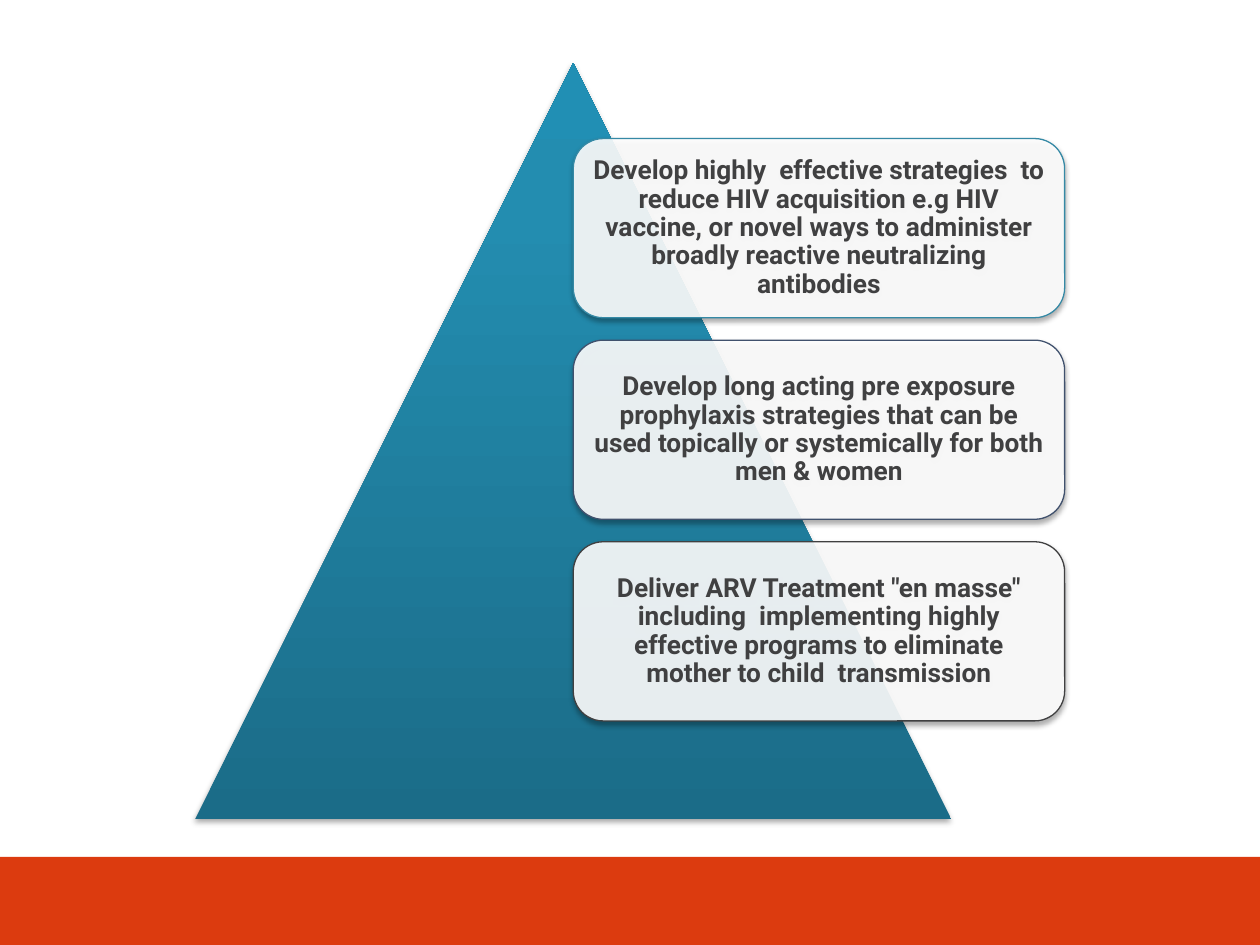
from lxml.etree import SubElement
from pptx import Presentation
from pptx.dml.color import RGBColor
from pptx.enum.shapes import MSO_SHAPE as SHAPE
from pptx.enum.text import MSO_ANCHOR as ANCHOR, PP_ALIGN as ALIGN
from pptx.oxml.ns import qn
from pptx.util import Pt

FONT = "Roboto"
GOALS = [
    ("Develop highly  effective strategies  to reduce HIV acquisition e.g HIV vaccine, "
     "or novel ways to administer broadly reactive neutralizing antibodies", "3589A5"),
    ("Develop long acting pre exposure prophylaxis strategies that can be used topically "
     "or systemically for both men & women", "40516D"),
    ("Deliver ARV Treatment \"en masse\" including  implementing highly effective programs "
     "to eliminate mother to child  transmission", "404041"),
]
STOPS = [(0, "1B6C88"), (80, "238DB0"), (100, "218FB4")]


def rgb(color):
    """Turn a hex string into a colour."""
    return RGBColor.from_string(color)


def add_child(parent, tag, **attrs):
    """Append a DrawingML element with the given attributes."""
    return SubElement(parent, qn(f"a:{tag}"), {k: str(v) for k, v in attrs.items()})


def add_color(parent, color, alpha=100):
    """Append a hex colour with an opacity in percent."""
    clr = add_child(parent, "srgbClr", val=color)
    if alpha < 100:
        add_child(clr, "alpha", val=alpha * 1000)


def add_box(slide, kind, x, y, w, h, fill=None, line=None, alpha=100):
    """Add a preset shape with a flat fill and an optional outline."""
    sp = slide.shapes.add_shape(kind, Pt(x), Pt(y), Pt(w), Pt(h))
    sp.shadow.inherit = False
    if fill:
        sp.fill.solid()
        sp.fill.fore_color.rgb = rgb(fill)
        if alpha < 100:
            clr = sp._element.spPr.find(f"{qn('a:solidFill')}/{qn('a:srgbClr')}")
            add_child(clr, "alpha", val=alpha * 1000)
    if line:
        sp.line.color.rgb = rgb(line)
        sp.line.width = Pt(0.75)
    else:
        sp.line.fill.background()
    return sp


def set_shadow(sp):
    """Give a shape a soft shadow below it."""
    effects = sp._element.spPr.find(qn("a:effectLst"))
    shadow = add_child(effects, "outerShdw", blurRad=Pt(3.1), dist=Pt(1.8),
                       dir=90 * 60000, rotWithShape=0)
    add_color(shadow, "000000", 35)


def set_gradient(sp, stops, angle):
    """Fill a shape with a linear gradient."""
    sp.fill.gradient()
    grad = sp._element.spPr.find(qn("a:gradFill"))
    for child in list(grad):
        grad.remove(child)
    stop_list = add_child(grad, "gsLst")
    for pos, color in stops:
        add_color(add_child(stop_list, "gs", pos=pos * 1000), color)
    add_child(grad, "lin", ang=angle * 60000, scaled=0)


def set_text(sp, text, size=15, color="404041", bold=True, inset=4.5):
    """Write centred text into a shape."""
    tf = sp.text_frame
    tf.word_wrap = True
    tf.vertical_anchor = ANCHOR.MIDDLE
    tf.margin_left = tf.margin_right = tf.margin_top = tf.margin_bottom = Pt(inset)
    p = tf.paragraphs[0]
    p.alignment = ALIGN.CENTER
    p.line_spacing = 0.9
    r = p.add_run()
    r.text = text
    r.font.name = FONT
    r.font.size = Pt(size)
    r.font.bold = bold
    r.font.color.rgb = rgb(color)


def add_goal_pyramid(slide, x, y, size, goals):
    """Draw a triangle with a column of goal cards starting at its centre line."""
    triangle = add_box(slide, SHAPE.ISOSCELES_TRIANGLE, x, y, size, size)
    set_gradient(triangle, STOPS, 270)
    set_shadow(triangle)
    pitch = size * 0.8 / len(goals)
    height = pitch * 8 / 9
    for i, (text, line) in enumerate(goals):
        card = add_box(slide, SHAPE.ROUNDED_RECTANGLE, x + size / 2,
                       y + size * 0.1 + i * pitch, size * 0.65, height,
                       fill="FFFFFF", line=line, alpha=90)
        set_shadow(card)
        set_text(card, text)


def main():
    """Build the slide and save it."""
    prs = Presentation()
    prs.slide_width, prs.slide_height = Pt(720), Pt(540)
    slide = prs.slides.add_slide(prs.slide_layouts[6])
    add_box(slide, SHAPE.RECTANGLE, 0, 489.6, 720, 50.4, fill="DC3B0F")
    add_goal_pyramid(slide, 111.6, 36, 432, GOALS)
    prs.save("out.pptx")


if __name__ == "__main__":
    main()
